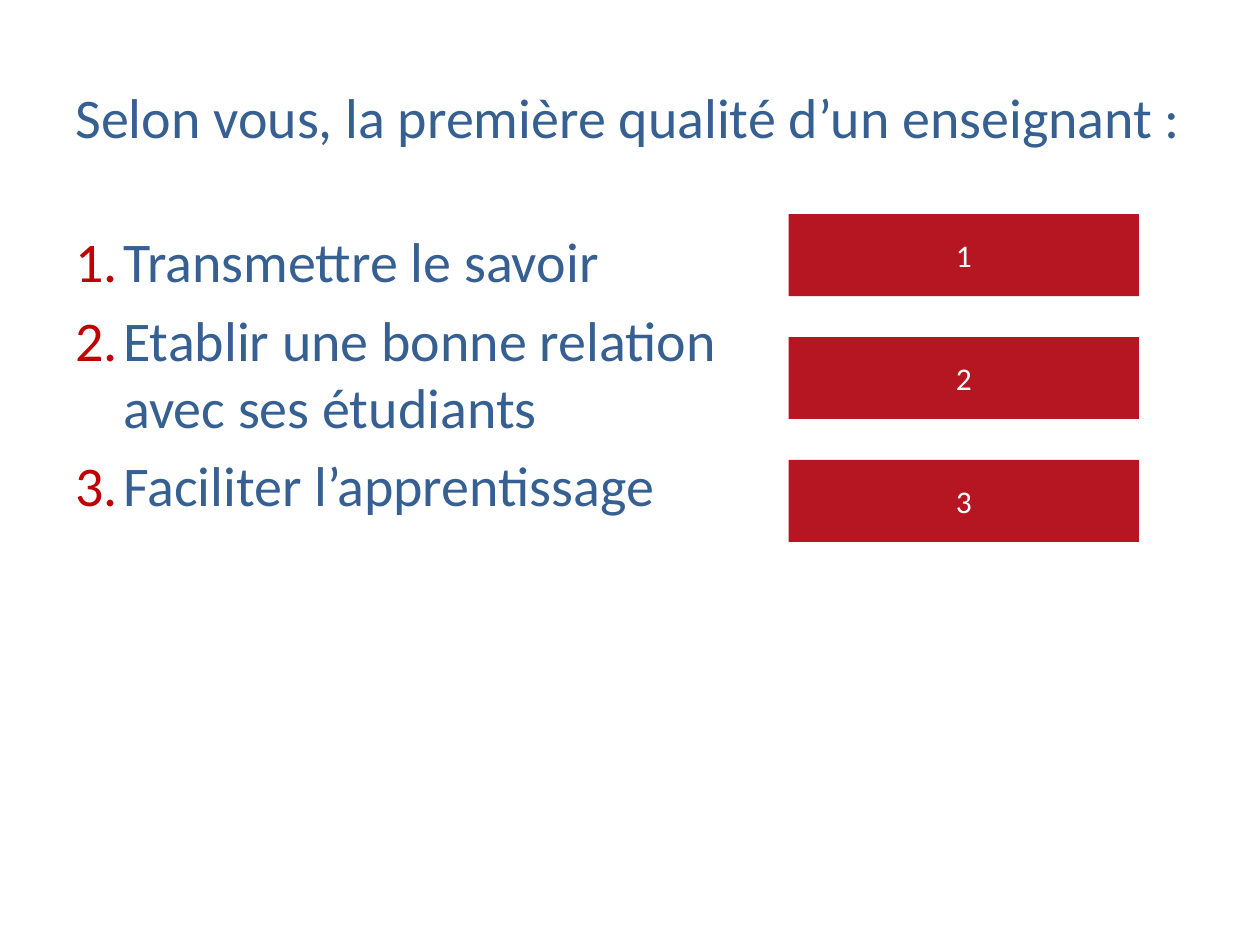
from lxml.etree import SubElement
from pptx import Presentation
from pptx.dml.color import RGBColor
from pptx.enum.shapes import MSO_SHAPE
from pptx.enum.text import MSO_ANCHOR, PP_ALIGN
from pptx.oxml.ns import qn
from pptx.util import Inches, Pt

COLORS = {"text": "376092", "number": "C00000", "box": "B51621", "label": "FFFFFF"}
QUESTION = "Selon vous, la première qualité d’un enseignant :"
ANSWERS = [
    "Transmettre le savoir",
    "Etablir une bonne relation avec ses étudiants",
    "Faciliter l’apprentissage",
]


def rgb(name):
    return RGBColor.from_string(COLORS[name])


def set_font(paragraph, size, color):
    paragraph.font.name = "Calibri"
    paragraph.font.size = Pt(size)
    paragraph.font.color.rgb = rgb(color)


def add_text_frame(slide, left, top, width, height):
    text_box = slide.shapes.add_textbox(
        Inches(left), Inches(top), Inches(width), Inches(height)
    )
    text_box.text_frame.word_wrap = True
    return text_box.text_frame


def number_paragraph(paragraph):
    """Give the paragraph a coloured automatic number and a hanging indent."""
    properties = paragraph._p.get_or_add_pPr()
    properties.set("marL", str(Inches(0.38)))
    properties.set("indent", str(-Inches(0.38)))
    bullet_color = SubElement(properties, qn("a:buClr"))
    SubElement(bullet_color, qn("a:srgbClr"), val=COLORS["number"])
    SubElement(properties, qn("a:buFont"), typeface="+mj-lt")
    SubElement(properties, qn("a:buAutoNum"), type="arabicPeriod")


def add_question(slide):
    frame = add_text_frame(slide, 0.5, 0.3, 9, 1.25)
    frame.vertical_anchor = MSO_ANCHOR.MIDDLE
    paragraph = frame.paragraphs[0]
    paragraph.text = QUESTION
    set_font(paragraph, 32, "text")


def add_answers(slide):
    frame = add_text_frame(slide, 0.5, 1.75, 5.92, 4.95)
    frame.text = "\n".join(ANSWERS)
    for paragraph in frame.paragraphs:
        paragraph.space_before = Pt(6.4)
        number_paragraph(paragraph)
        set_font(paragraph, 32, "text")


def add_answer_box(group, number):
    top = 1.7 + (number - 1) * 0.975
    box = group.shapes.add_shape(
        MSO_SHAPE.RECTANGLE, Inches(6.26), Inches(top), Inches(2.78), Inches(0.65)
    )
    box.shadow.inherit = False
    box.fill.solid()
    box.fill.fore_color.rgb = rgb("box")
    box.line.fill.background()
    box.text_frame.vertical_anchor = MSO_ANCHOR.MIDDLE
    paragraph = box.text_frame.paragraphs[0]
    paragraph.text = str(number)
    paragraph.alignment = PP_ALIGN.CENTER
    set_font(paragraph, 18, "label")


def main():
    presentation = Presentation()
    presentation.slide_width = Inches(10)
    presentation.slide_height = Inches(7.5)
    slide = presentation.slides.add_slide(presentation.slide_layouts[6])
    add_question(slide)
    add_answers(slide)
    group = slide.shapes.add_group_shape()
    for number in range(1, len(ANSWERS) + 1):
        add_answer_box(group, number)
    presentation.save("out.pptx")


if __name__ == "__main__":
    main()
